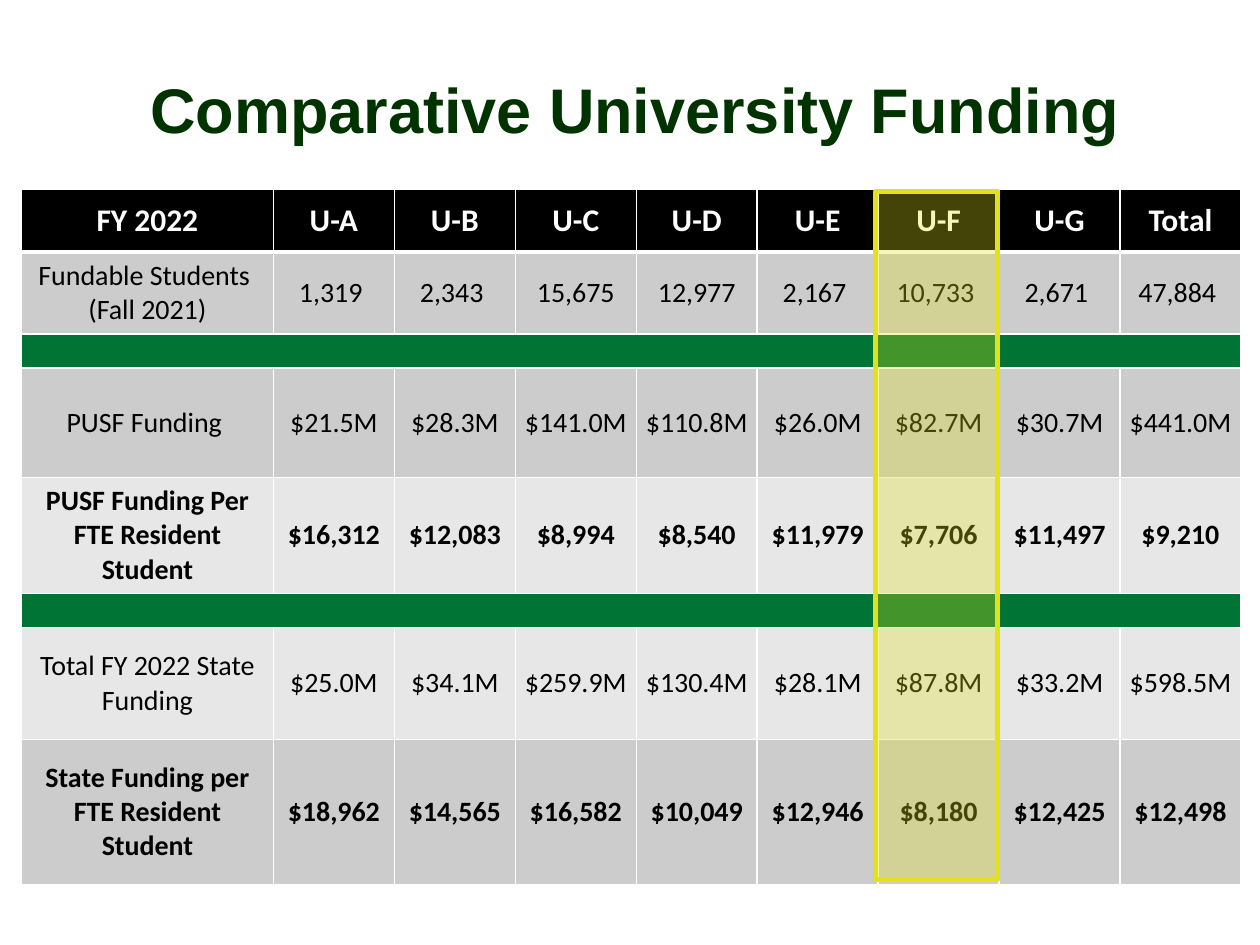
from lxml import etree
from pptx import Presentation
from pptx.dml.color import RGBColor
from pptx.enum.shapes import MSO_SHAPE
from pptx.enum.text import MSO_ANCHOR, PP_ALIGN
from pptx.oxml.ns import qn
from pptx.util import Inches, Pt

RECT = MSO_SHAPE.RECTANGLE
MIDDLE = MSO_ANCHOR.MIDDLE
CENTER = PP_ALIGN.CENTER

WHITE = RGBColor(0xFF, 0xFF, 0xFF)
BLACK = RGBColor(0x00, 0x00, 0x00)
PINE = RGBColor(0x00, 0x33, 0x00)
GREEN = RGBColor(0x00, 0x74, 0x34)
GRAY = RGBColor(0xCC, 0xCC, 0xCC)
PALE = RGBColor(0xE7, 0xE7, 0xE7)
YELLOW = RGBColor(0xE2, 0xE1, 0x1B)

HEAD = ["FY 2022", "U-A", "U-B", "U-C", "U-D", "U-E", "U-F", "U-G", "Total"]
ROWS = [
    (0.5, BLACK, True, HEAD),
    (0.65, GRAY, False, ["Fundable Students \n(Fall 2021)", "1,319 ", "2,343 ", "15,675",
                         "12,977", "2,167 ", "10,733 ", "2,671 ", "47,884 "]),
    (0.27, GREEN, False, []),
    (0.87, GRAY, False, ["PUSF Funding ", "$21.5M", "$28.3M", "$141.0M", "$110.8M",
                         "$26.0M", "$82.7M", "$30.7M", "$441.0M"]),
    (0.92, PALE, True, ["PUSF Funding Per FTE Resident Student", "$16,312", "$12,083",
                        "$8,994", "$8,540", "$11,979", "$7,706", "$11,497", "$9,210"]),
    (0.27, GREEN, False, []),
    (0.89, PALE, False, ["Total FY 2022 State Funding", "$25.0M", "$34.1M", "$259.9M",
                         "$130.4M", "$28.1M", "$87.8M", "$33.2M", "$598.5M"]),
    (1.15, GRAY, True, ["State Funding per FTE Resident Student", "$18,962", "$14,565",
                        "$16,582", "$10,049", "$12,946", "$8,180", "$12,425", "$12,498"]),
]


def write(frame, text, size=16, font="Calibri", color=BLACK, bold=False):
    """Fill a text frame with centred paragraphs, one per line of text."""
    frame.word_wrap = True
    for i, line in enumerate(text.split("\n")):
        para = frame.paragraphs[0] if i == 0 else frame.add_paragraph()
        para.alignment = CENTER
        run = para.add_run()
        run.text = line
        run.font.size = Pt(size)
        run.font.name = font
        run.font.bold = bold
        run.font.color.rgb = color


def edge(cell, base):
    """Draw white borders round a cell, with the given bottom width in points."""
    props = cell._tc.get_or_add_tcPr()
    for side, width in (("L", 1), ("R", 1), ("T", 1), ("B", base)):
        line = etree.SubElement(props, qn("a:ln" + side), w=str(Pt(width)))
        fill = etree.SubElement(line, qn("a:solidFill"))
        etree.SubElement(fill, qn("a:srgbClr"), val=str(WHITE))


def inset(cell, side, top):
    """Set the side and the top and bottom margins of a cell."""
    cell.margin_left = cell.margin_right = Inches(side)
    cell.margin_top = cell.margin_bottom = Inches(top)


def title(slide, left, top, width, height):
    """Place the slide title in its box."""
    box = slide.shapes.add_textbox(Inches(left), Inches(top), Inches(width), Inches(height))
    box.text_frame.vertical_anchor = MIDDLE
    write(box.text_frame, "Comparative University Funding", size=36, font="Arial",
          color=PINE, bold=True)


def band(table, row):
    """Merge an empty row into one thin divider."""
    cells = list(table.rows[row].cells)
    for cell in cells:
        inset(cell, 0, 0)
        para = cell.text_frame.paragraphs[0]
        etree.SubElement(para._p, qn("a:endParaRPr"), sz="800")
    cells[0].merge(cells[-1])


def funds(slide, left, top, width, height, first=2):
    """Place the funding table, with a wider first column."""
    frame = slide.shapes.add_table(len(ROWS), len(HEAD), Inches(left), Inches(top),
                                   Inches(width), Inches(height))
    table = frame.table
    rest = (width - first) / (len(HEAD) - 1)
    for i, col in enumerate(table.columns):
        col.width = Inches(rest if i else first)
    for r, (tall, shade, bold, texts) in enumerate(ROWS):
        table.rows[r].height = Inches(tall)
        for cell in table.rows[r].cells:
            edge(cell, 1 if r else 3)
            cell.fill.solid()
            cell.fill.fore_color.rgb = shade
            cell.vertical_anchor = MIDDLE
        if not texts:
            band(table, r)
        for c, text in enumerate(texts):
            cell = table.cell(r, c)
            if r and (c or not bold and r > 1):
                inset(cell, 0.01, 0.01)
            write(cell.text_frame, text, size=16 if r else 18,
                  color=BLACK if r else WHITE, bold=bold)


def mark(slide, left, top, width, height):
    """Place the clear yellow frame over one column."""
    shape = slide.shapes.add_shape(RECT, Inches(left), Inches(top), Inches(width),
                                   Inches(height))
    shape.shadow.inherit = False
    shape.fill.solid()
    shape.fill.fore_color.rgb = YELLOW
    tint = shape._element.spPr.find(qn("a:solidFill"))[0]
    etree.SubElement(tint, qn("a:alpha"), val="30000")
    shape.line.color.rgb = YELLOW
    shape.line.width = Pt(3)


def main():
    """Build and save the slide."""
    deck = Presentation()
    deck.slide_width, deck.slide_height = Inches(10), Inches(7.5)
    slide = deck.slides.add_slide(deck.slide_layouts[6])
    title(slide, 0.33, 0.25, 9.42, 1.22)
    funds(slide, 0.17, 1.5, 9.68, 5.5)
    mark(slide, 6.95, 1.52, 0.97, 5.46)
    deck.save("out.pptx")


if __name__ == "__main__":
    main()
